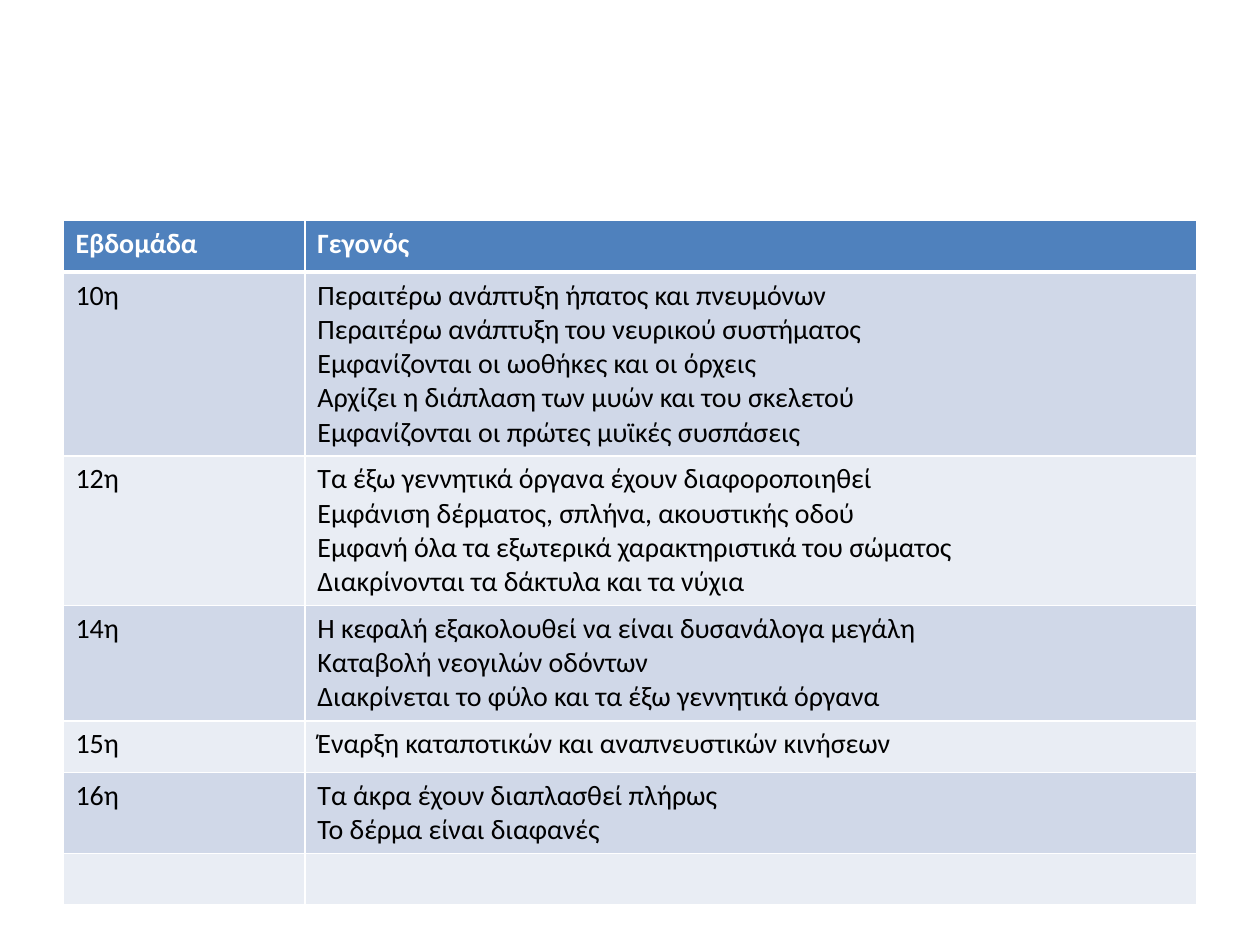
from dataclasses import dataclass

import pptx
import pptx.dml.color
import pptx.oxml
import pptx.oxml.ns
import pptx.table
import pptx.util


@dataclass(frozen=True)
class Theme:
    font: str = "Calibri"
    text_size: int = 16
    header_fill: str = "4F81BD"
    header_text: str = "FFFFFF"
    band_fills: tuple[str, str] = ("D0D8E8", "E9EDF4")
    body_text: str = "000000"
    rule: str = "FFFFFF"
    thin: int = 1
    thick: int = 3


@dataclass(frozen=True)
class Grid:
    """Slide of 10 by 7.5 inches, split into columns and rows."""
    width: float = 10
    height: float = 7.5
    columns: int = 20
    rows: int = 30

    def x(self, columns: float) -> int:
        return pptx.util.Inches(self.width * columns / self.columns)

    def y(self, rows: float) -> int:
        return pptx.util.Inches(self.height * rows / self.rows)


@dataclass(frozen=True)
class Week:
    label: str
    events: tuple[str, ...]


@dataclass(frozen=True)
class CellStyle:
    fill: str
    text: str
    bold: bool
    top: int
    bottom: int


THEME = Theme()
GRID = Grid()

# Table geometry, in grid columns and rows
LEFT, TOP, WIDTH, HEIGHT = 1, 7, 18, 21.4
WEEK_WIDTH = 3.84
COLUMN_WIDTHS = (WEEK_WIDTH, WIDTH - WEEK_WIDTH)
MIN_ROW_HEIGHT = 1.64

HEADING = Week("Εβδομάδα", ("Γεγονός",))
WEEKS = (
    Week("10η", (
        "Περαιτέρω ανάπτυξη ήπατος και πνευμόνων",
        "Περαιτέρω ανάπτυξη του νευρικού συστήματος",
        "Εμφανίζονται οι ωοθήκες και οι όρχεις",
        "Αρχίζει η διάπλαση των μυών και του σκελετού",
        "Εμφανίζονται οι πρώτες μυϊκές συσπάσεις",
    )),
    Week("12η", (
        "Τα έξω γεννητικά όργανα έχουν διαφοροποιηθεί",
        "Εμφάνιση δέρματος, σπλήνα, ακουστικής οδού",
        "Εμφανή όλα τα εξωτερικά χαρακτηριστικά του σώματος",
        "Διακρίνονται τα δάκτυλα και τα νύχια",
    )),
    Week("14η", (
        "Η κεφαλή εξακολουθεί να είναι δυσανάλογα μεγάλη",
        "Καταβολή νεογιλών οδόντων",
        "Διακρίνεται το φύλο και τα έξω γεννητικά όργανα",
    )),
    Week("15η", ("Έναρξη καταποτικών και αναπνευστικών κινήσεων",)),
    Week("16η", (
        "Τα άκρα έχουν διαπλασθεί πλήρως",
        "Το δέρμα είναι διαφανές",
    )),
    Week("", ()),
)


def row_style(index: int) -> CellStyle:
    """Heading on top, then two alternating bands."""
    if index == 0:
        return CellStyle(THEME.header_fill, THEME.header_text, True,
                         THEME.thin, THEME.thick)
    top = THEME.thick if index == 1 else THEME.thin
    return CellStyle(THEME.band_fills[(index - 1) % 2], THEME.body_text, False,
                     top, THEME.thin)


def draw_borders(cell: pptx.table._Cell, style: CellStyle) -> None:
    sides = {"lnL": THEME.thin, "lnR": THEME.thin,
             "lnT": style.top, "lnB": style.bottom}
    properties = cell._tc.get_or_add_tcPr()
    for position, (side, points) in enumerate(sides.items()):
        border = pptx.oxml.parse_xml(
            f'<a:{side} {pptx.oxml.ns.nsdecls("a")} w="{pptx.util.Pt(points)}">'
            f'<a:solidFill><a:srgbClr val="{THEME.rule}"/></a:solidFill></a:{side}>')
        properties.insert(position, border)


def fill_cell(cell: pptx.table._Cell, lines: tuple[str, ...], style: CellStyle) -> None:
    cell.fill.solid()
    cell.fill.fore_color.rgb = pptx.dml.color.RGBColor.from_string(style.fill)
    draw_borders(cell, style)
    cell.text_frame.text = "\n".join(lines)
    font_format = {"name": THEME.font, "size": pptx.util.Pt(THEME.text_size),
                   "bold": style.bold}
    for paragraph in cell.text_frame.paragraphs:
        for attribute, value in font_format.items():
            setattr(paragraph.font, attribute, value)
        for run in paragraph.runs:
            for attribute, value in font_format.items():
                setattr(run.font, attribute, value)
            run.font.color.rgb = pptx.dml.color.RGBColor.from_string(style.text)


def main() -> None:
    deck = pptx.Presentation()
    deck.slide_width, deck.slide_height = GRID.x(GRID.columns), GRID.y(GRID.rows)
    slide = deck.slides.add_slide(deck.slide_layouts[6])

    # Table of weeks and events
    entries = (HEADING, *WEEKS)
    frame = slide.shapes.add_table(
        len(entries), len(COLUMN_WIDTHS),
        GRID.x(LEFT), GRID.y(TOP), GRID.x(WIDTH), GRID.y(HEIGHT))
    timeline = frame.table
    for column, width in zip(timeline.columns, COLUMN_WIDTHS):
        column.width = GRID.x(width)

    # Rows grow from the minimum height with their text
    for index, entry in enumerate(entries):
        timeline.rows[index].height = GRID.y(MIN_ROW_HEIGHT)
        style = row_style(index)
        fill_cell(timeline.cell(index, 0), (entry.label,), style)
        fill_cell(timeline.cell(index, 1), entry.events, style)
    frame.height = GRID.y(HEIGHT)

    deck.save("out.pptx")


if __name__ == "__main__":
    main()
